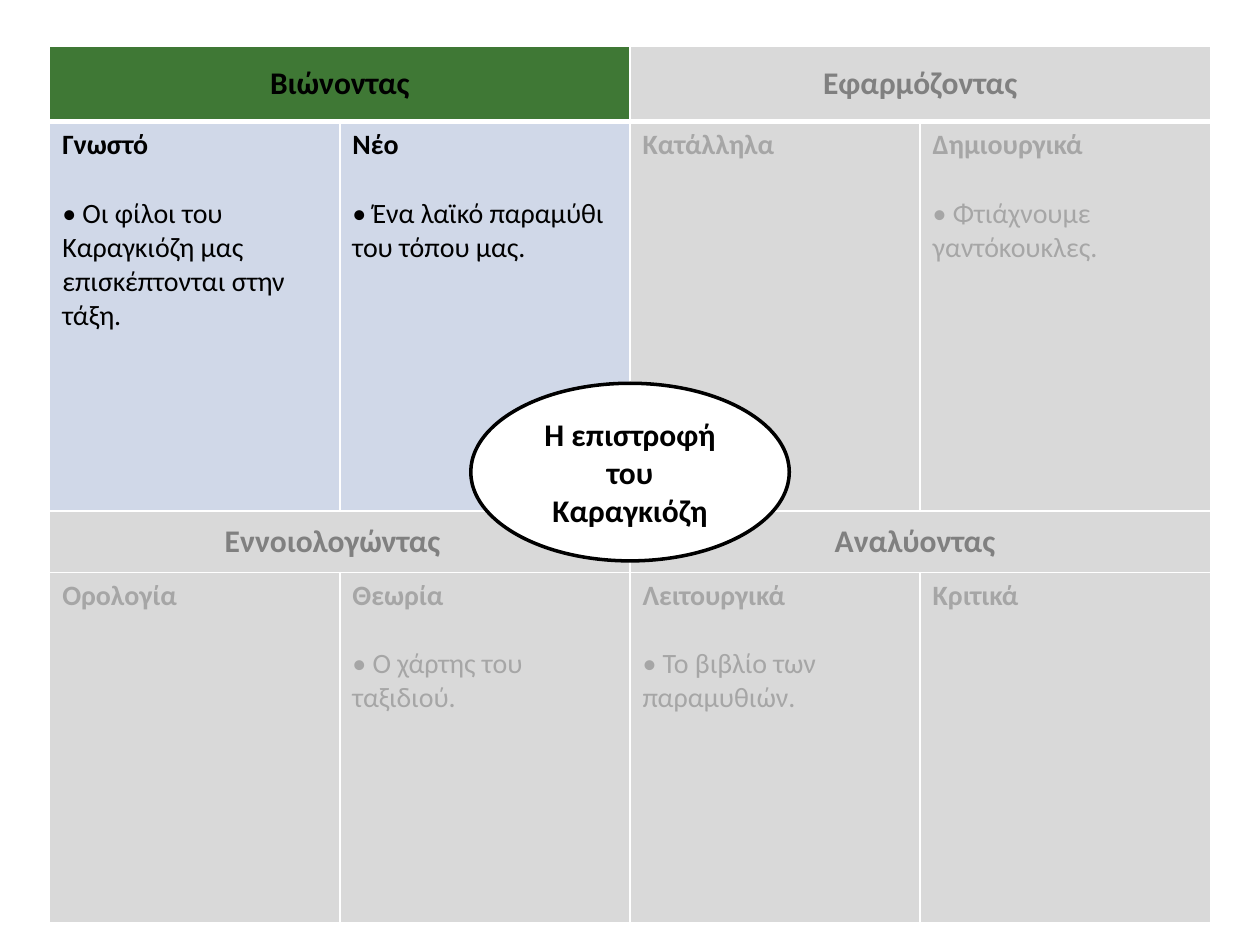
from lxml import etree
from pptx import Presentation
from pptx.dml.color import RGBColor
from pptx.enum.shapes import MSO_SHAPE as Shape
from pptx.enum.text import MSO_ANCHOR as Anchor, PP_ALIGN as Align
from pptx.oxml.ns import qn
from pptx.util import Pt

BLACK = RGBColor(0x00, 0x00, 0x00)
WHITE = RGBColor(0xFF, 0xFF, 0xFF)
GREEN = RGBColor(0x3F, 0x78, 0x35)
BLUE = RGBColor(0xD0, 0xD8, 0xE8)
LIGHT_GRAY = RGBColor(0xD9, 0xD9, 0xD9)
MID_GRAY = RGBColor(0xA6, 0xA6, 0xA6)
DARK_GRAY = RGBColor(0x80, 0x80, 0x80)


def style(para, size, color, bold):
    para.font.name = "Calibri"
    para.font.size = Pt(size)
    para.font.bold = bold
    para.font.color.rgb = color


def add_borders(cell, top, bottom):
    properties = cell._tc.get_or_add_tcPr()
    for index, (side, width) in enumerate(
            [("lnL", 1), ("lnR", 1), ("lnT", top), ("lnB", bottom)]):
        line = etree.Element(qn(f"a:{side}"), w=str(Pt(width)))
        fill = etree.SubElement(line, qn("a:solidFill"))
        etree.SubElement(fill, qn("a:srgbClr"), val=str(WHITE))
        properties.insert(index, line)


deck = Presentation()
deck.slide_width, deck.slide_height = Pt(720), Pt(540)
page = deck.slides.add_slide(deck.slide_layouts[6])

# Table grid
ROW_HEIGHTS = [43, 222.5, 35, 200.5]
COLUMN_WIDTH = 165.8
table = page.shapes.add_table(4, 4, Pt(28.4), Pt(26.6), Pt(4 * COLUMN_WIDTH),
                              Pt(sum(ROW_HEIGHTS))).table
table.first_row = table.horz_banding = False
for column in table.columns:
    column.width = Pt(COLUMN_WIDTH)
for row, height in zip(table.rows, ROW_HEIGHTS):
    row.height = Pt(height)

# Fills and borders, with a thick rule under the first row
for r in range(4):
    for c in range(4):
        cell = table.cell(r, c)
        cell.fill.solid()
        active = r < 2 and c < 2
        cell.fill.fore_color.rgb = (GREEN, BLUE)[r] if active else LIGHT_GRAY
        add_borders(cell, 3 if r == 1 else 1, 3 if r == 0 else 1)

# Headings over column pairs: row, column, text, colour, left indent
headings = [
    (0, 0, "Βιώνοντας", BLACK, None),
    (0, 2, "Εφαρμόζοντας", DARK_GRAY, None),
    (2, 0, "Εννοιολογώντας", DARK_GRAY, 100),
    (2, 2, "Αναλύοντας", DARK_GRAY, 117),
]
for r, c, text, color, indent in headings:
    cell = table.cell(r, c)
    cell.merge(table.cell(r, c + 1))
    cell.vertical_anchor = Anchor.MIDDLE
    para = cell.text_frame.paragraphs[0]
    para.text = text
    if indent is None:
        para.alignment = Align.CENTER
    else:
        cell.margin_left = Pt(indent)
    style(para, 18, color, True)

# Topics with their activities
topics = {
    1: [("Γνωστό", "Οι φίλοι του Καραγκιόζη μας επισκέπτονται στην τάξη."),
        ("Νέο", "Ένα λαϊκό παραμύθι του τόπου μας."),
        ("Κατάλληλα", None),
        ("Δημιουργικά", "Φτιάχνουμε γαντόκουκλες.")],
    3: [("Ορολογία", None),
        ("Θεωρία", "Ο χάρτης του ταξιδιού."),
        ("Λειτουργικά", "Το βιβλίο των παραμυθιών."),
        ("Κριτικά", None)],
}
for r, entries in topics.items():
    for c, (title, activity) in enumerate(entries):
        color = BLACK if r == 1 and c < 2 else MID_GRAY
        frame = table.cell(r, c).text_frame
        para = frame.paragraphs[0]
        para.text = title
        style(para, 16, color, True)
        if activity:
            para = frame.add_paragraph()
            para.text = " " + activity
            para.space_before = Pt(19.5)
            properties = para._p.get_or_add_pPr()
            properties.set("marL", "0")
            properties.set("indent", "0")
            etree.SubElement(properties, qn("a:buFont"), typeface="Calibri")
            etree.SubElement(properties, qn("a:buChar"), char="•")
            style(para, 16, color, False)

# Central oval
oval = page.shapes.add_shape(Shape.OVAL, Pt(269), Pt(219), Pt(182), Pt(101.5))
oval.shadow.inherit = False
oval.fill.solid()
oval.fill.fore_color.rgb = WHITE
oval.line.color.rgb = BLACK
oval.line.width = Pt(2)
frame = oval.text_frame
frame.word_wrap = True
frame.vertical_anchor = Anchor.MIDDLE
para = frame.paragraphs[0]
para.text = "Η επιστροφή του Καραγκιόζη"
para.alignment = Align.CENTER
style(para, 18, BLACK, True)

deck.save("out.pptx")
